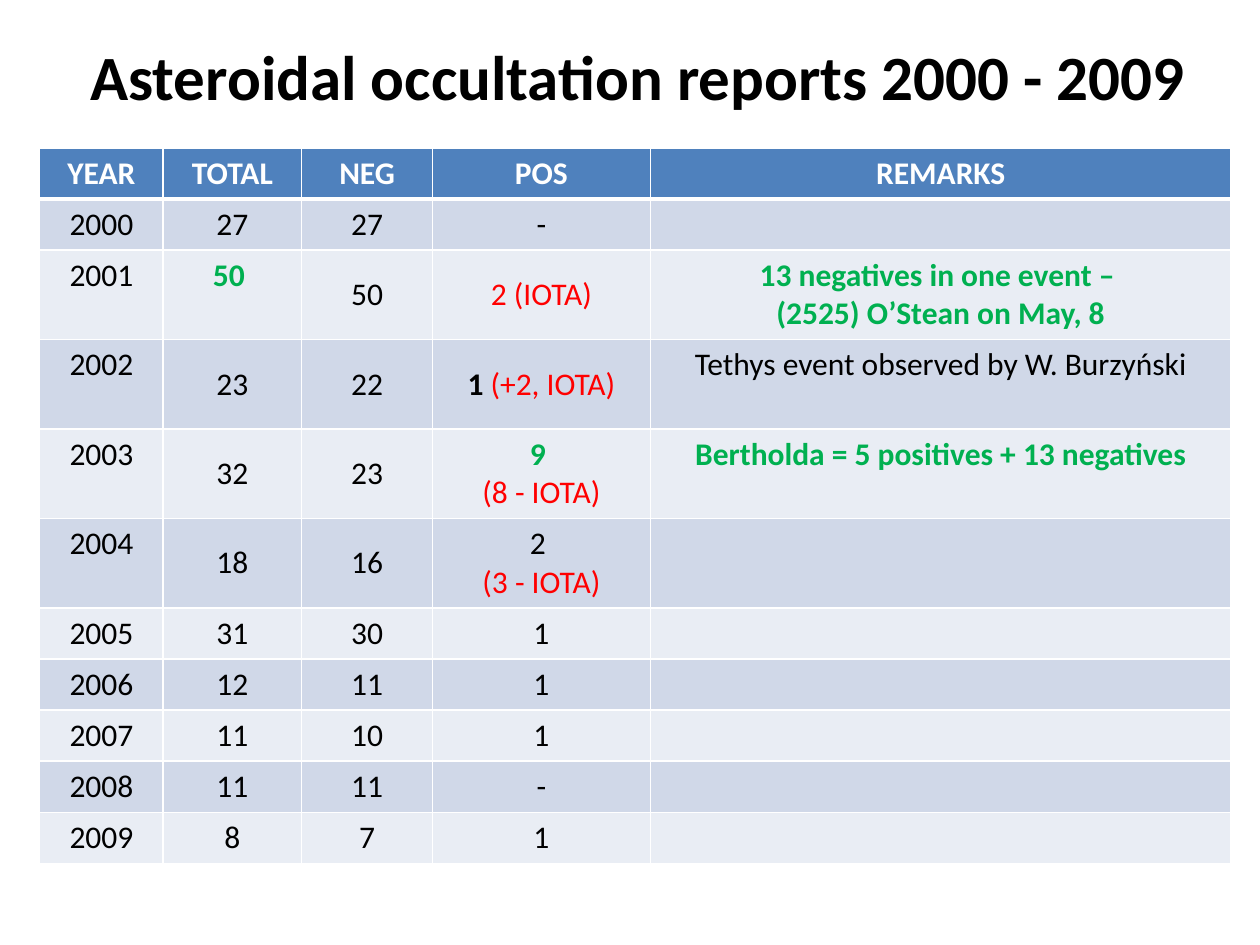
from dataclasses import dataclass

from lxml import etree
from pptx import Presentation
from pptx.dml.color import RGBColor
from pptx.enum.text import MSO_ANCHOR, PP_ALIGN
from pptx.oxml.ns import qn
from pptx.util import Cm, Pt

MID = MSO_ANCHOR.MIDDLE
TOP = MSO_ANCHOR.TOP
CENTER = PP_ALIGN.CENTER

FONT = "Calibri"
BLACK, WHITE, RED, GREEN = "000000", "FFFFFF", "FF0000", "00B050"
HEAD, DARK, LIGHT = "4F81BD", "D0D8E8", "E9EDF4"

WIDTHS = (2.49, 2.79, 2.64, 4.39, 11.71)
LOW, TALL = 1.03, 1.8


@dataclass(frozen=True)
class Run:
    text: str
    color: str = BLACK
    bold: bool = False
    wrap: bool = False  # start on a new line


@dataclass(frozen=True)
class Row:
    year: str
    total: Run
    neg: str
    pos: tuple[Run, ...]
    notes: tuple[Run, ...] = ()
    high: float = LOW


ROWS = (
    Row("2000", Run("27"), "27", (Run("-"),)),
    Row("2001", Run("50 ", GREEN, True), "50", (Run("2 (IOTA)", RED),),
        (Run("13 negatives in one event – ", GREEN, True),
         Run("(2525) O’Stean on May, 8", GREEN, True, True)), TALL),
    Row("2002", Run("23"), "22",
        (Run("1 ", bold=True), Run("(+2, IOTA)", RED)),
        (Run("Tethys event observed by W. Burzyński"),), TALL),
    Row("2003", Run("32"), "23",
        (Run("9 ", GREEN, True), Run("(8 - IOTA)", RED, wrap=True)),
        (Run("Bertholda = 5 positives + 13 negatives", GREEN, True),), TALL),
    Row("2004", Run("18"), "16",
        (Run("2 "), Run("(3 - IOTA)", RED, wrap=True)), high=TALL),
    Row("2005", Run("31"), "30", (Run("1"),)),
    Row("2006", Run("12"), "11", (Run("1"),)),
    Row("2007", Run("11"), "10", (Run("1"),)),
    Row("2008", Run("11"), "11", (Run("-"),)),
    Row("2009", Run("8"), "7", (Run("1"),)),
)


def paint(fmt, color: str) -> None:
    """Apply a hex colour to a fill."""
    fmt.solid()
    fmt.fore_color.rgb = RGBColor.from_string(color)


def write(frame, runs: tuple[Run, ...], size: int) -> None:
    par = frame.paragraphs[0]
    par.alignment = CENTER
    for item in runs:
        if item.wrap:
            par.add_line_break()
        run = par.add_run()
        run.text = item.text
        run.font.name = FONT
        run.font.size = Pt(size)
        run.font.bold = item.bold
        paint(run.font.fill, item.color)


def edge(cell, side: str, width: float) -> None:
    props = cell._tc.get_or_add_tcPr()
    line = etree.SubElement(props, qn(f"a:ln{side}"), w=str(Pt(width)))
    fill = etree.SubElement(line, qn("a:solidFill"))
    etree.SubElement(fill, qn("a:srgbClr"), val=WHITE)


def fill_cell(cell, runs: tuple[Run, ...], color: str, anchor,
              top: float = 1, bottom: float = 1) -> None:
    for side, width in (("L", 1), ("R", 1), ("T", top), ("B", bottom)):
        edge(cell, side, width)
    paint(cell.fill, color)
    cell.vertical_anchor = anchor
    write(cell.text_frame, runs, 18)


def add_title(slide, text: str) -> None:
    title = slide.shapes.title
    title.left, title.top = Cm(1.19), Cm(0.41)
    title.width, title.height = Cm(23.34), Cm(2.21)
    title.text_frame.vertical_anchor = MID
    write(title.text_frame, (Run(text, bold=True),), 36)


def add_grid(slide) -> None:
    high = LOW + sum(row.high for row in ROWS)
    table = slide.shapes.add_table(
        len(ROWS) + 1, len(WIDTHS), Cm(0.8), Cm(2.98),
        Cm(sum(WIDTHS)), Cm(high)).table
    for col, width in zip(table.columns, WIDTHS):
        col.width = Cm(width)

    # Header row
    table.rows[0].height = Cm(LOW)
    names = ("YEAR", "TOTAL", "NEG", "POS", "REMARKS")
    for x, name in enumerate(names):
        fill_cell(table.cell(0, x), (Run(name, WHITE, True),), HEAD, TOP,
                  bottom=3)

    # One row per year, in alternating bands
    for y, row in enumerate(ROWS, 1):
        table.rows[y].height = Cm(row.high)
        band = DARK if y % 2 else LIGHT
        parts = ((Run(row.year),), (row.total,), (Run(row.neg),),
                 row.pos, row.notes)
        mark = TOP if row.total.bold else MID
        places = (TOP, mark, MID, MID, TOP)
        for x, (runs, place) in enumerate(zip(parts, places)):
            fill_cell(table.cell(y, x), runs, band, place,
                      top=3 if y == 1 else 1)


def main() -> None:
    deck = Presentation()
    deck.slide_width, deck.slide_height = Cm(25.4), Cm(19.05)
    slide = deck.slides.add_slide(deck.slide_layouts[5])
    add_title(slide, "Asteroidal occultation reports 2000 - 2009")
    add_grid(slide)
    deck.save("out.pptx")


if __name__ == "__main__":
    main()
